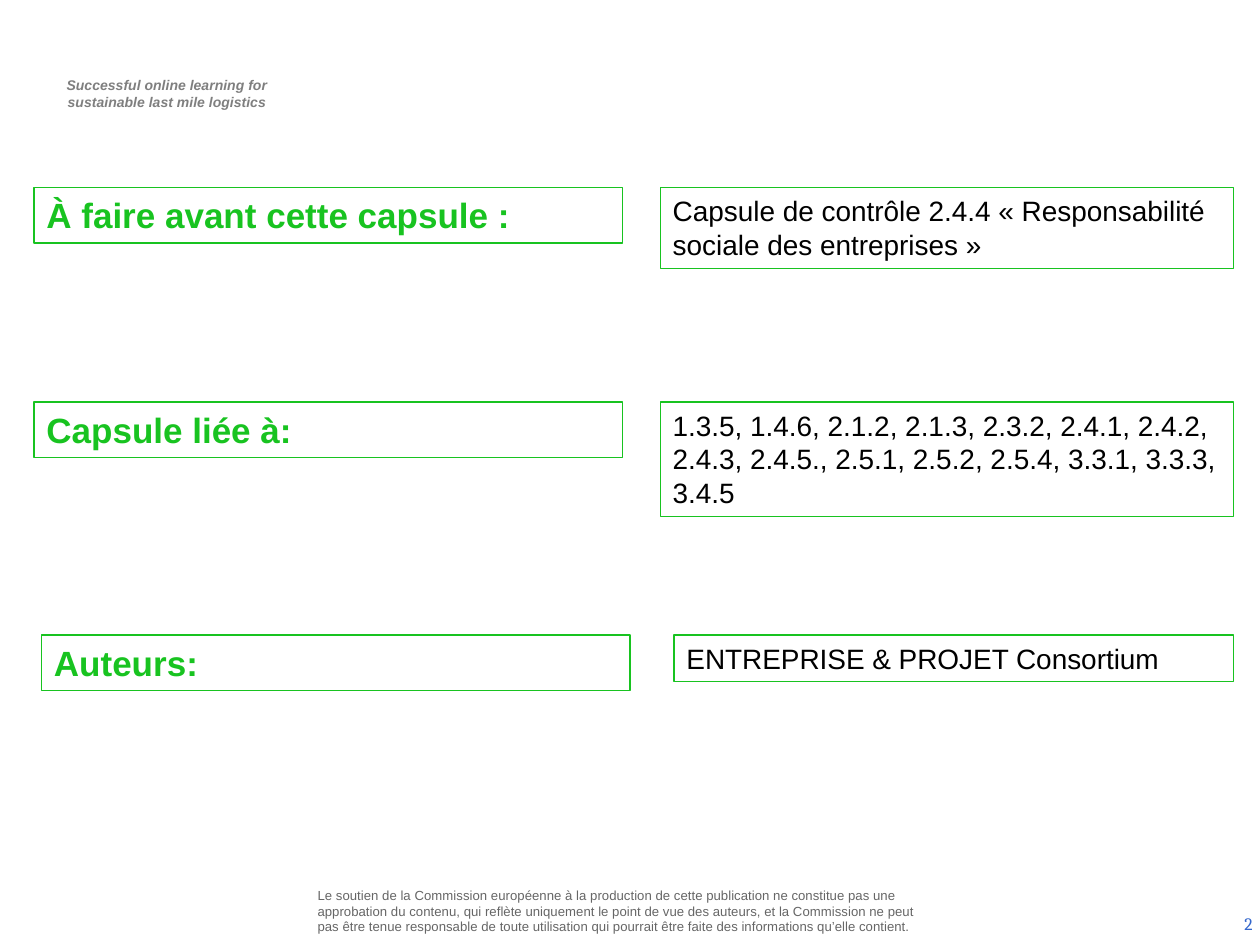
from pptx import Presentation
from pptx.dml.color import RGBColor
from pptx.enum.shapes import MSO_SHAPE
from pptx.enum.text import MSO_ANCHOR, PP_ALIGN
from pptx.util import Inches, Pt

RECT = MSO_SHAPE.RECTANGLE
TOP, MIDDLE = MSO_ANCHOR.TOP, MSO_ANCHOR.MIDDLE
LEFT, CENTER, RIGHT = PP_ALIGN.LEFT, PP_ALIGN.CENTER, PP_ALIGN.RIGHT
GREEN = RGBColor(0x18, 0xC3, 0x20)
BLUE = RGBColor(0x33, 0x66, 0xCC)
GREY = RGBColor(0x7F, 0x7F, 0x7F)
DARK_GREY = RGBColor(0x66, 0x66, 0x66)
BLACK = RGBColor(0, 0, 0)
WHITE = RGBColor(0xFF, 0xFF, 0xFF)

HEADER = ["Successful online learning for", "sustainable last mile logistics"]
DISCLAIMER = (
    "Le soutien de la Commission européenne à la production de cette publication "
    "ne constitue pas une approbation du contenu, qui reflète uniquement le point "
    "de vue des auteurs, et la Commission ne peut pas être tenue responsable de "
    "toute utilisation qui pourrait être faite des informations qu’elle contient."
)
PAGE_NUMBER = "2"
ROWS = [
    (1.49, 0.27, "À faire avant cette capsule :", 5.24, 0.64,
     "Capsule de contrôle 2.4.4 « Responsabilité sociale des entreprises »"),
    (3.19, 0.27, "Capsule liée à:", 5.24, 0.91,
     "1.3.5, 1.4.6, 2.1.2, 2.1.3, 2.3.2, 2.4.1, 2.4.2, 2.4.3, 2.4.5., 2.5.1, "
     "2.5.2, 2.5.4, 3.3.1, 3.3.3, 3.4.5"),
    (5.04, 0.33, "Auteurs:", 5.35, 0.37, "ENTREPRISE & PROJET Consortium"),
]
LABEL_WIDTH, LABEL_HEIGHT = 4.67, 0.44
RIGHT_EDGE = 9.79

HEADER_FONT = {"name": "Arial", "size": Pt(8), "bold": True, "italic": True}
DISCLAIMER_FONT = {"name": "Arial", "size": Pt(7.5)}
NUMBER_FONT = {"name": "Cambria", "size": Pt(10)}
LABEL_FONT = {"name": "Arial", "size": Pt(20), "bold": True}
VALUE_FONT = {"name": "Arial", "size": Pt(16), "bold": False}


def write(sp, lines, font, color, align=LEFT, anchor=TOP, insets=(0.1, 0.05, 0.1, 0.05)):
    tf = sp.text_frame
    tf.word_wrap = True
    tf.vertical_anchor = anchor
    for side, inset in zip(("left", "top", "right", "bottom"), insets):
        setattr(tf, f"margin_{side}", Inches(inset))
    for i, line in enumerate(lines):
        p = tf.add_paragraph() if i else tf.paragraphs[0]
        p.alignment = align
        r = p.add_run()
        r.text = line
        for key, value in font.items():
            setattr(r.font, key, value)
        r.font.color.rgb = color


def add_text(s, box, *args, **kwargs):
    write(s.shapes.add_textbox(*map(Inches, box)), *args, **kwargs)


def add_box(s, box, text, font, color):
    sp = s.shapes.add_shape(RECT, *map(Inches, box))
    sp.shadow.inherit = False
    sp.fill.solid()
    sp.fill.fore_color.rgb = WHITE
    sp.line.color.rgb = GREEN
    sp.line.width = Pt(0.75)
    write(sp, [text], font, color)


prs = Presentation()
prs.slide_width, prs.slide_height = Inches(10), Inches(7.5)
s = prs.slides.add_slide(prs.slide_layouts[6])

add_text(s, (0.29, 0.56, 2.03, 0.37), HEADER, HEADER_FONT, GREY, CENTER,
         insets=(0.14, 0.05, 0.1, 0.05))
add_text(s, (2.48, 6.98, 4.89, 0.5), [DISCLAIMER], DISCLAIMER_FONT, DARK_GREY,
         anchor=MIDDLE, insets=(0.04,) * 4)
add_text(s, (7.71, 7.13, 2.33, 0.4), [PAGE_NUMBER], NUMBER_FONT, BLUE, RIGHT, MIDDLE)

for top, label_left, label, value_left, value_height, value in ROWS:
    add_box(s, (label_left, top, LABEL_WIDTH, LABEL_HEIGHT), label, LABEL_FONT, GREEN)
    add_box(s, (value_left, top, RIGHT_EDGE - value_left, value_height),
            value, VALUE_FONT, BLACK)

prs.save("out.pptx")
